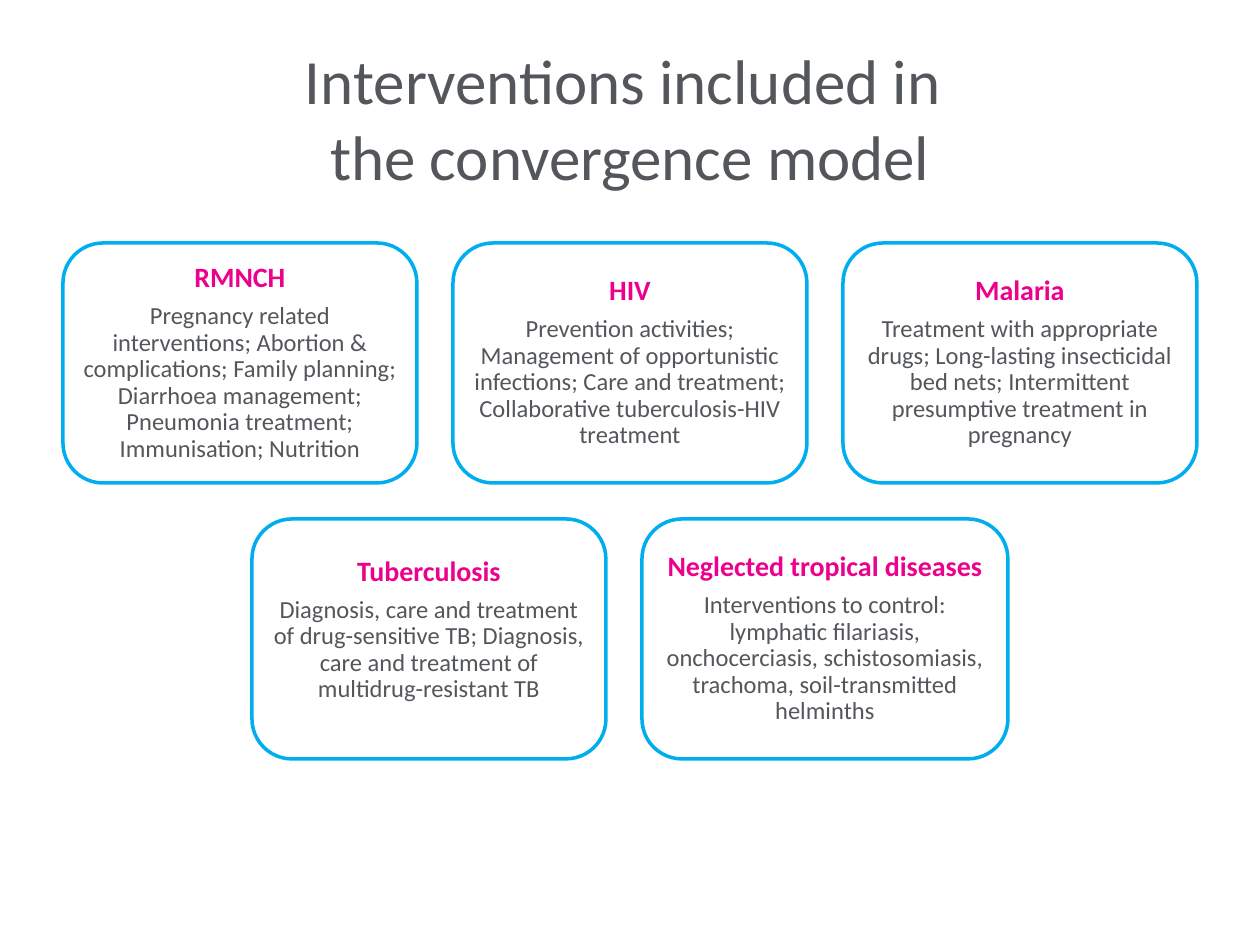
import pptx
import pptx.util
import pptx.dml.color
import pptx.enum.shapes
import pptx.enum.text

PX = 914400 / 126
SLIDE_W, SLIDE_H = 1260, 945
THEME = {
    "font": "Calibri",
    "text": "53565A",
    "heading": "EC008C",
    "border": "00AEEF",
    "card": "FFFFFF",
    "title_size": 36,
    "heading_size": 16,
    "body_size": 14,
}
GAP, CARD_H, CARDS_TOP, INSET = 36, 240, 243, 8

rows = [
    [
        (354, INSET, "RMNCH", "Pregnancy related interventions; Abortion & complications; "
         "Family planning; Diarrhoea management; Pneumonia treatment; Immunisation; Nutrition"),
        (354, INSET, "HIV", "Prevention activities; Management of opportunistic infections; "
         "Care and treatment; Collaborative tuberculosis-HIV treatment"),
        (354, INSET, "Malaria", "Treatment with appropriate drugs; Long-lasting insecticidal "
         "bed nets; Intermittent presumptive treatment in pregnancy"),
    ],
    [
        (354, INSET + 18, "Tuberculosis", "Diagnosis, care and treatment of drug-sensitive TB; "
         "Diagnosis, care and treatment of multidrug-resistant TB"),
        (366, INSET, "Neglected tropical diseases", "Interventions to control: lymphatic "
         "filariasis, onchocerciasis, schistosomiasis, trachoma, soil-transmitted helminths"),
    ],
]


def px(n):
    return pptx.util.Emu(round(n * PX))


def add_run(p, text, size, color, bold=False):
    p.alignment = pptx.enum.text.PP_ALIGN.CENTER
    r = p.add_run()
    r.text = text
    r.font.name = THEME["font"]
    r.font.size = pptx.util.Pt(THEME[size])
    r.font.bold = bold
    r.font.color.rgb = pptx.dml.color.RGBColor.from_string(THEME[color])


prs = pptx.Presentation()
prs.slide_width, prs.slide_height = px(SLIDE_W), px(SLIDE_H)
s = prs.slides.add_slide(prs.slide_layouts[6])

tf = s.shapes.add_textbox(px(63), px(38), px(1134), px(158)).text_frame
tf.word_wrap = True
tf.vertical_anchor = pptx.enum.text.MSO_ANCHOR.MIDDLE
p = tf.paragraphs[0]
add_run(p, "Interventions included in ", "title_size", "text")
p.add_line_break()
add_run(p, "the convergence model", "title_size", "text")

for i, row in enumerate(rows):
    row_w = sum(card[0] for card in row) + GAP * (len(row) - 1)
    left = (SLIDE_W - row_w) // 2
    top = CARDS_TOP + i * (CARD_H + GAP)
    for width, bottom, heading, body in row:
        sp = s.shapes.add_shape(pptx.enum.shapes.MSO_SHAPE.ROUNDED_RECTANGLE,
                                px(left), px(top), px(width), px(CARD_H))
        sp.shadow.inherit = False
        sp.fill.solid()
        sp.fill.fore_color.rgb = pptx.dml.color.RGBColor.from_string(THEME["card"])
        sp.line.color.rgb = pptx.dml.color.RGBColor.from_string(THEME["border"])
        sp.line.width = pptx.util.Pt(2)
        tf = sp.text_frame
        tf.word_wrap = True
        tf.vertical_anchor = pptx.enum.text.MSO_ANCHOR.MIDDLE
        tf.margin_left = tf.margin_right = tf.margin_top = px(INSET)
        tf.margin_bottom = px(bottom)
        p = tf.paragraphs[0]
        p.line_spacing = 0.9
        p.space_after = pptx.util.Pt(5.6)
        add_run(p, heading, "heading_size", "heading", bold=True)
        p = tf.add_paragraph()
        p.line_spacing = 0.9
        add_run(p, body, "body_size", "text")
        left += width + GAP

prs.save("out.pptx")
